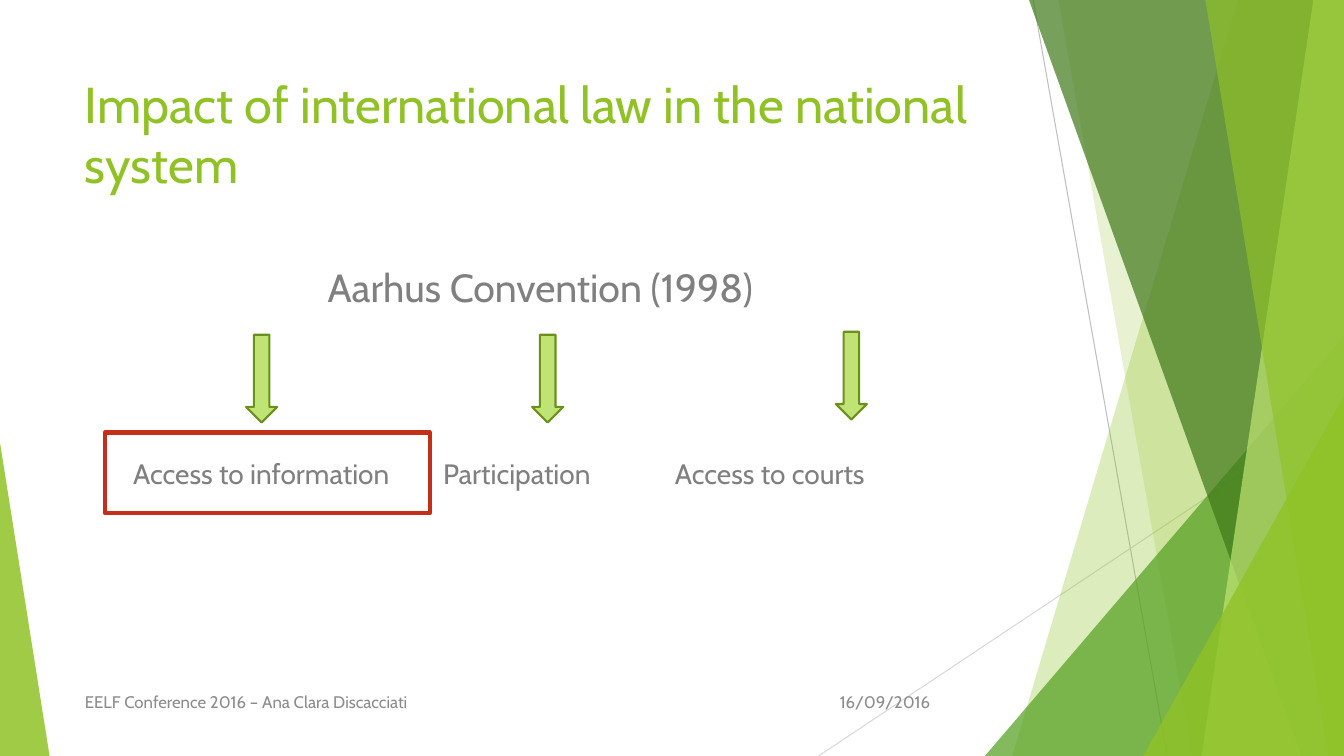
from dataclasses import dataclass

from lxml.etree import SubElement
from pptx import Presentation
from pptx.dml.color import RGBColor
from pptx.enum.shapes import MSO_CONNECTOR, MSO_SHAPE
from pptx.enum.text import MSO_ANCHOR as Anchor, PP_ALIGN as Align
from pptx.oxml.ns import qn
from pptx.util import Inches, Pt

COLUMNS, ROWS = 32, 18


@dataclass(frozen=True)
class Theme:
    font: str = "Cabin"
    green: str = "90C226"
    leaf: str = "54A021"
    forest: str = "3F7819"
    lime: str = "C0E474"
    arrow_edge: str = "6B901C"
    highlight: str = "C42F1A"
    body: str = "808080"
    footer: str = "8C8C8C"
    steep_ray: str = "BFBFBF"
    flat_ray: str = "D9D9D9"
    title_size: int = 36
    heading_size: int = 28
    label_size: int = 20
    footer_size: int = 12


class SlideBuilder:
    """Places elements on a slide by grid columns and rows."""

    def __init__(self, deck, theme):
        self.theme = theme
        self.slide = deck.slides.add_slide(deck.slide_layouts[6])
        self.shapes = self.slide.shapes
        self.column = deck.slide_width / COLUMNS
        self.row = deck.slide_height / ROWS

    def point(self, x, y):
        return round(x * self.column), round(y * self.row)

    def style(self, shape, fill=None, opacity=100, edge=None, weight=0):
        shape.shadow.inherit = False
        if fill:
            shape.fill.solid()
            shape.fill.fore_color.rgb = RGBColor.from_string(fill)
            if opacity < 100:
                color = shape.fill._xPr.find(qn("a:solidFill"))[0]
                SubElement(color, qn("a:alpha"), val=str(opacity * 1000))
        else:
            shape.fill.background()
        if edge:
            shape.line.color.rgb = RGBColor.from_string(edge)
            shape.line.width = Pt(weight)
        else:
            shape.line.fill.background()

    def ray(self, start, end, color):
        line = self.shapes.add_connector(
            MSO_CONNECTOR.STRAIGHT, *self.point(*start), *self.point(*end))
        line.line.color.rgb = RGBColor.from_string(color)
        line.line.width = Pt(0.75)
        SubElement(line._element.spPr, qn("a:effectLst"))

    def facet(self, top, bottom, fill, opacity):
        """Fill from a slanted edge to the right side of the slide."""
        outline = self.shapes.build_freeform(*self.point(top, 0))
        corners = [(COLUMNS, 0), (COLUMNS, ROWS), (bottom, ROWS)]
        outline.add_line_segments([self.point(*corner) for corner in corners])
        self.style(outline.convert_to_shape(), fill, opacity)

    def preset(self, kind, x, y, width, height, **look):
        shape = self.shapes.add_shape(
            kind, *self.point(x, y), *self.point(width, height))
        self.style(shape, **look)
        return shape

    def corner(self, x, y, width, apex, opacity, fill):
        """Draw a right triangle standing on the slide's bottom edge."""
        triangle = self.preset(MSO_SHAPE.ISOSCELES_TRIANGLE, x, y, width,
                               ROWS - y, fill=fill, opacity=opacity)
        triangle.adjustments[0] = apex

    def text(self, words, x, y, width, height, size, color,
             align=Align.LEFT, anchor=Anchor.MIDDLE):
        box = self.shapes.add_textbox(
            *self.point(x, y), *self.point(width, height))
        frame = box.text_frame
        frame.word_wrap = True
        frame.vertical_anchor = anchor
        frame.margin_left = frame.margin_right = 0
        frame.margin_top = frame.margin_bottom = 0
        paragraph = frame.paragraphs[0]
        paragraph.alignment = align
        run = paragraph.add_run()
        run.text = words
        run.font.name = self.theme.font
        run.font.size = Pt(size)
        run.font.color.rgb = RGBColor.from_string(color)


def draw_backdrop(page, theme):
    page.ray((24.6, 0), (27.79, ROWS), theme.steep_ray)
    page.ray((COLUMNS, 9.67), (19.49, ROWS), theme.flat_ray)
    page.facet(29.47, 24.1, theme.green, 30)
    page.facet(25.2, 28.39, theme.green, 20)
    page.corner(23.45, 8, 8.55, 1, 72, theme.leaf)
    page.facet(24.5, 30.98, theme.forest, 70)
    page.facet(31.27, 28.61, theme.lime, 70)
    page.facet(28.7, 31.63, theme.green, 65)
    page.corner(27.22, 9.43, 4.78, 1, 80, theme.green)
    page.corner(0, 10.54, 1.18, 0, 85, theme.green)


def draw_content(page, theme):
    page.text("Impact of international law in the national system",
              2.02, 1.73, 22.08, 3.22, theme.title_size, theme.green,
              anchor=Anchor.TOP)
    page.text("Aarhus Convention (1998)", 7.8, 6.08, 12, 1.5,
              theme.heading_size, theme.body)

    pillars = [
        ("Access to information", 3.17, 5.86, 7.97),
        ("Participation", 10.55, 12.67, 7.97),
        ("Access to courts", 16.07, 19.9, 7.9),
    ]
    for pillar, label_x, arrow_x, arrow_y in pillars:
        page.text(pillar, label_x, 10.53, 7, 1.5, theme.label_size, theme.body)
        page.preset(MSO_SHAPE.DOWN_ARROW, arrow_x, arrow_y, 0.74, 2.09,
                    fill=theme.lime, edge=theme.arrow_edge, weight=1.5)
    page.preset(MSO_SHAPE.RECTANGLE, 2.5, 10.3, 7.73, 1.92,
                edge=theme.highlight, weight=3)

    page.text("16/09/2016", 19, 16.22, 3.15, 0.96, theme.footer_size,
              theme.footer, align=Align.RIGHT)
    page.text("EELF Conference 2016 – Ana Clara Discacciati",
              2.02, 16.22, 16, 0.96, theme.footer_size, theme.footer)


def main():
    deck = Presentation()
    deck.slide_width, deck.slide_height = Inches(13.33), Inches(7.5)
    theme = Theme()
    page = SlideBuilder(deck, theme)
    draw_backdrop(page, theme)
    draw_content(page, theme)
    deck.save("out.pptx")


if __name__ == "__main__":
    main()
